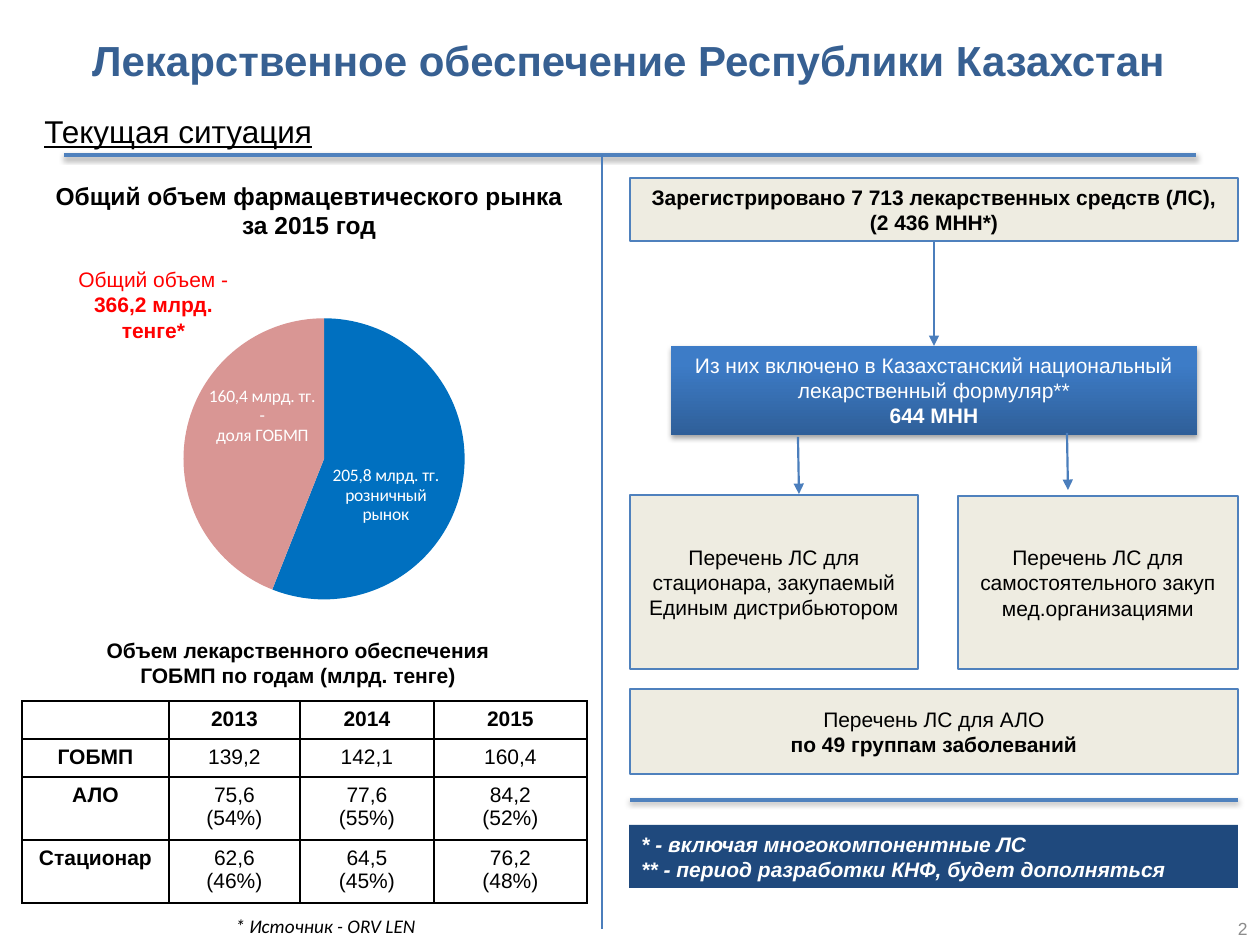
import pptx
import pptx.util
import pptx.chart.data
import pptx.dml.color
import pptx.enum.chart
import pptx.enum.shapes
import pptx.enum.text
import pptx.oxml
import pptx.oxml.ns

RGB = pptx.dml.color.RGBColor
Pt = pptx.util.Pt
ALIGN = pptx.enum.text.PP_ALIGN
ANCHOR = pptx.enum.text.MSO_ANCHOR
qn = pptx.oxml.ns.qn
NS = pptx.oxml.ns.nsdecls("a")

BLACK = RGB(0, 0, 0)
WHITE = RGB(0xFF, 0xFF, 0xFF)
RED = RGB(0xFF, 0, 0)
GRAY = RGB(0x8C, 0x8C, 0x8C)
TITLE = RGB(0x37, 0x60, 0x92)
NAVY = RGB(0x1F, 0x49, 0x7D)
CREAM = RGB(0xEE, 0xEC, 0xE1)
BLUE = RGB(0x4F, 0x81, 0xBD)
LINE = RGB(0x4B, 0x7E, 0xBC)
GRADIENT = [(0, RGB(0x2F, 0x5F, 0x99)), (0.8, RGB(0x3D, 0x7C, 0xC7))]
SLICES = [RGB(0, 0x70, 0xC0), RGB(0xD9, 0x96, 0x94)]

BOLD, PLAIN = {"bold": True}, {}
CARD = {"fill": CREAM, "line": BLUE}
LIST_CARD = {**CARD, "anchor": ANCHOR.MIDDLE, "inset": 5}
LEFT = {"align": ALIGN.LEFT}
MIDDLE = {"anchor": ANCHOR.MIDDLE}

TEXTS = [
    ((6, 30, 1245, 60), [[("Лекарственное обеспечение Республики Казахстан", BOLD)]],
     {**MIDDLE, "size": 24, "color": TITLE}),
    ((32, 106, 296, 50), [[("Текущая ситуация", {"underline": True})]],
     {**LEFT, "size": 18, "wrap": False}),
    ((223, 908, 290, 37), [[("* Источник - ORV LEN", {"italic": True, "name": "Calibri"})]],
     {**LEFT, "size": 11}),
    ((59, 260, 189, 89), [[("Общий объем - ", PLAIN), ("366,2 млрд. тенге*", BOLD)]],
     {**MIDDLE, "color": RED}),
    ((42, 155, 534, 110), [[("Общий объем фармацевтического рынка", BOLD)], [("за 2015 год", BOLD)]],
     {**MIDDLE, "size": 14}),
    ((19, 631, 558, 63),
     [[("Объем лекарственного обеспечения", BOLD)], [("ГОБМП по годам (млрд. тенге)", BOLD)]],
     {**MIDDLE, "fill": WHITE}),
    ((629, 825, 609, 63),
     [[(t, {"bold": True, "italic": True})] for t in
      ("* - включая многокомпонентные ЛС", "** - период разработки КНФ, будет дополняться")],
     {"align": ALIGN.JUSTIFY, "fill": NAVY, "color": WHITE}),
    ((630, 178, 608, 63),
     [[("Зарегистрировано 7 713 лекарственных средств (ЛС), (2 436 МНН*)", BOLD)]], CARD),
    ((671, 346, 526, 89),
     [[("Из них включено в Казахстанский национальный лекарственный формуляр**", PLAIN)],
      [("644 МНН", BOLD)]],
     {"fill": GRADIENT, "color": WHITE, "shadow": 35}),
    ((630, 495, 288, 174),
     [[("Перечень ЛС для стационара, закупаемый Единым дистрибьютором", PLAIN)]], LIST_CARD),
    ((958, 496, 280, 173),
     [[("Перечень ЛС для самостоятельного закуп мед.организациями", PLAIN)]], LIST_CARD),
    ((630, 689, 608, 85),
     [[("Перечень ЛС для АЛО", PLAIN)], [("по 49 группам заболеваний", BOLD)]],
     {**LIST_CARD, "after": 6}),
    ((1086, 900, 174, 45), [[("2", PLAIN)]],
     {"align": ALIGN.RIGHT, "anchor": ANCHOR.BOTTOM, "size": 10, "color": GRAY}),
]

RULES = [(64, 155, 1196, 155), (630, 800, 1238, 800)]
DIVIDER = (602, 155, 602, 929)
ARROWS = [(934, 242, 934, 346), (1067, 433, 1068, 490), (798, 437, 799, 494)]

TABLE_AT = (22, 701)
COLUMNS = [147, 131, 134, 153]
ROWS = [38, 38, 63, 63]
CELLS = [
    ["", "2013", "2014", "2015"],
    ["ГОБМП", "139,2", "142,1", "160,4"],
    ["АЛО", "75,6\n(54%)", "77,6\n(55%)", "84,2\n(52%)"],
    ["Стационар", "62,6\n(46%)", "64,5\n(45%)", "76,2\n(48%)"],
]

CHART_BOX = (-40, 300, 721, 331)
PLOT = (0.31, 0.05, 0.39, 0.86)
SHARES = [56, 44]
LABELS = [("205,8 млрд. тг.\nрозничный\nрынок", (-0.01, 0.07)),
          ("160,4 млрд. тг. -\nдоля ГОБМП", (0.01, -0.09))]


def px(n):
    return round(n * 914400 / 126)


def set_font(font, color, **values):
    font.color.rgb = color
    for key, value in values.items():
        setattr(font, key, value)


def set_effect(s, alpha=None):
    shadow = "" if alpha is None else (
        '<a:outerShdw blurRad="39370" dist="20320" dir="5400000" rotWithShape="0">'
        f'<a:srgbClr val="000000"><a:alpha val="{alpha * 1000}"/></a:srgbClr></a:outerShdw>')
    s._element.spPr.append(pptx.oxml.parse_xml(f"<a:effectLst {NS}>{shadow}</a:effectLst>"))


def add_text(shapes, box, paragraphs, style):
    at = [px(n) for n in box]
    fill = style.get("fill")
    if fill is None:
        s = shapes.add_textbox(*at)
    else:
        s = shapes.add_shape(pptx.enum.shapes.MSO_SHAPE.RECTANGLE, *at)
        if isinstance(fill, list):
            s.fill.gradient()
            s.fill.gradient_angle = 90
            for stop, (position, color) in zip(s.fill.gradient_stops, fill):
                stop.position, stop.color.rgb = position, color
        else:
            s.fill.solid()
            s.fill.fore_color.rgb = fill
        if "line" in style:
            s.line.color.rgb, s.line.width = style["line"], Pt(1.25)
        else:
            s.line.fill.background()
        set_effect(s, style.get("shadow"))
    tf = s.text_frame
    tf.word_wrap = style.get("wrap", True)
    tf.vertical_anchor = style.get("anchor", ANCHOR.TOP)
    if "inset" in style:
        for side in ("left", "top", "right", "bottom"):
            setattr(tf, f"margin_{side}", px(style["inset"]))
    for i, runs in enumerate(paragraphs):
        p = tf.paragraphs[0] if i == 0 else tf.add_paragraph()
        p.alignment = style.get("align", ALIGN.CENTER)
        for text, extra in runs:
            r = p.add_run()
            r.text = text
            set_font(r.font, style.get("color", BLACK),
                     **{"name": "Arial", "size": Pt(style.get("size", 12)), **extra})
    if "after" in style:
        p.space_after = Pt(style["after"])


def add_line(shapes, ends, color, width, shadow=None, arrow=False):
    s = shapes.add_connector(pptx.enum.shapes.MSO_CONNECTOR.STRAIGHT, *[px(n) for n in ends])
    s.line.color.rgb, s.line.width = color, Pt(width)
    if arrow:
        s.line._get_or_add_ln().append(pptx.oxml.parse_xml(f'<a:tailEnd {NS} type="triangle"/>'))
    set_effect(s, shadow)


def add_volumes(shapes):
    table = shapes.add_table(len(ROWS), len(COLUMNS), *[px(n) for n in
                             (*TABLE_AT, sum(COLUMNS), sum(ROWS))]).table
    for column, width in zip(table.columns, COLUMNS):
        column.width = px(width)
    for i, (row, height) in enumerate(zip(table.rows, ROWS)):
        row.height = px(height)
        for j, cell in enumerate(row.cells):
            cell.text = CELLS[i][j]
            for p in cell.text_frame.paragraphs:
                p.alignment = ALIGN.CENTER
                set_font(p.font, BLACK, name="Arial", size=Pt(12), bold=i == 0 or j == 0)
            for side in "LRTB":
                cell._tc.get_or_add_tcPr().append(pptx.oxml.parse_xml(
                    f'<a:ln{side} {NS} w="12700"><a:solidFill><a:srgbClr val="000000"/>'
                    f"</a:solidFill></a:ln{side}>"))
            cell.fill.solid()
            cell.fill.fore_color.rgb = WHITE


def manual_layout(**values):
    items = "".join(f'<c:{key} val="{value}"/>' for key, value in values.items())
    return pptx.oxml.parse_xml(f'<c:layout {pptx.oxml.ns.nsdecls("c")}>'
                               f"<c:manualLayout>{items}</c:manualLayout></c:layout>")


def add_pie(shapes):
    data = pptx.chart.data.CategoryChartData()
    data.categories = ["1", "2"]
    data.add_series("Series 1", SHARES)
    chart = shapes.add_chart(pptx.enum.chart.XL_CHART_TYPE.PIE,
                             *[px(n) for n in CHART_BOX], data).chart
    chart.has_legend = chart.has_title = False
    set_font(chart.font, BLACK, name="Calibri", size=Pt(10))
    plot = chart.plots[0]
    plot.vary_by_categories = True
    for i, (text, _) in enumerate(LABELS):
        point = plot.series[0].points[i]
        point.format.fill.solid()
        point.format.fill.fore_color.rgb = SLICES[i]
        label = point.data_label
        label.position = pptx.enum.chart.XL_LABEL_POSITION.CENTER
        label.text_frame.text = text
        for p in label.text_frame.paragraphs:
            for r in p.runs:
                set_font(r.font, WHITE, name="Calibri", size=Pt(10), bold=False)
    for element, (_, (x, y)) in zip(chart._chartSpace.iter(qn("c:dLbl")), LABELS):
        for old in element.findall(qn("c:layout")):
            element.remove(old)
        element.insert(1, manual_layout(x=x, y=y))
    area = chart._chartSpace.chart.plotArea
    for old in area.findall(qn("c:layout")):
        area.remove(old)
    x, y, w, h = PLOT
    area.insert(0, manual_layout(layoutTarget="inner", xMode="edge", yMode="edge",
                                 x=x, y=y, w=w, h=h))


def main():
    prs = pptx.Presentation()
    prs.slide_width, prs.slide_height = px(1260), px(945)
    shapes = prs.slides.add_slide(prs.slide_layouts[6]).shapes
    for ends in RULES:
        add_line(shapes, ends, BLUE, 2, shadow=38)
    add_line(shapes, DIVIDER, LINE, 0.75)
    for box, paragraphs, style in TEXTS:
        add_text(shapes, box, paragraphs, style)
    add_volumes(shapes)
    add_pie(shapes)
    for ends in ARROWS:
        add_line(shapes, ends, LINE, 1.25, arrow=True)
    prs.save("out.pptx")


if __name__ == "__main__":
    main()
